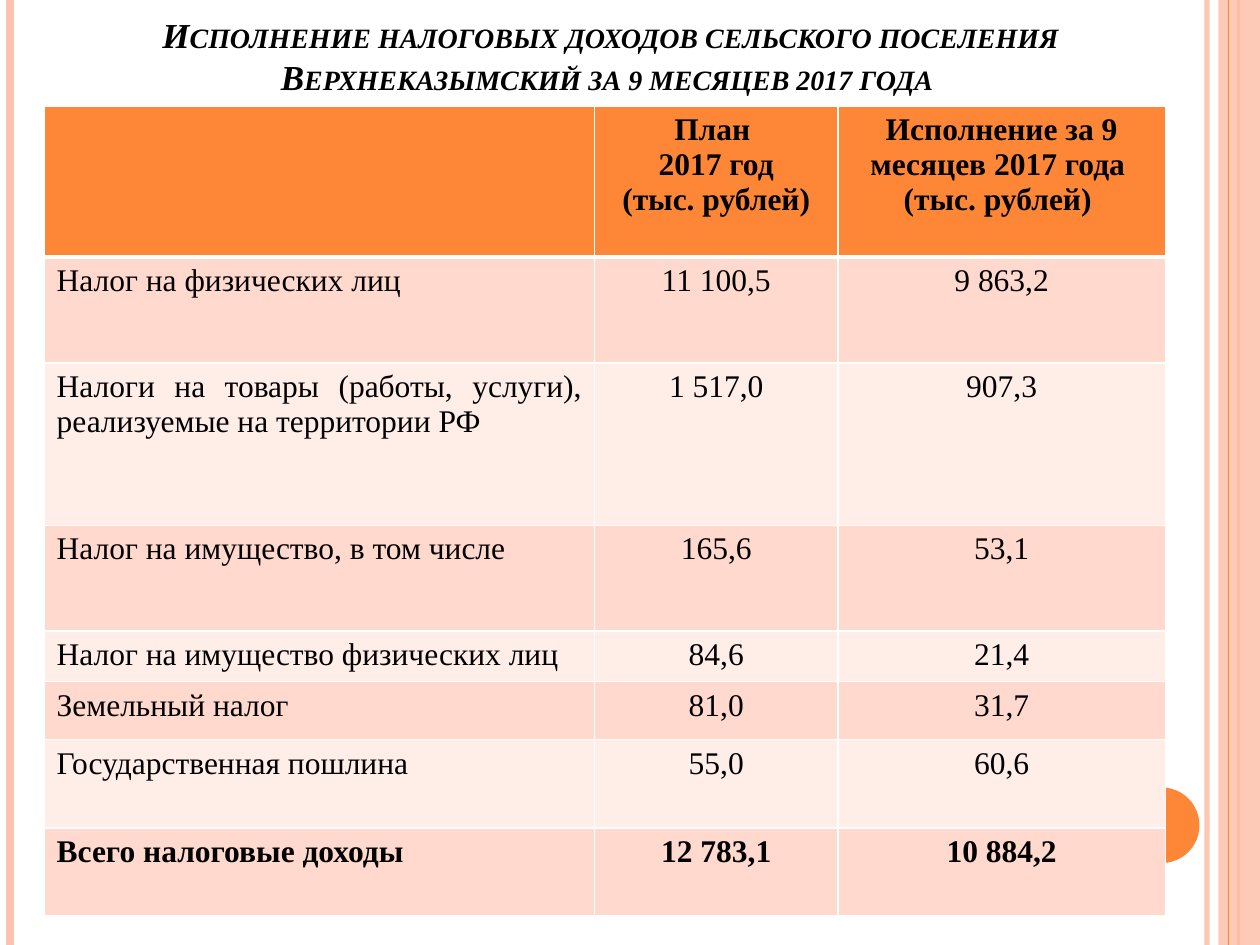
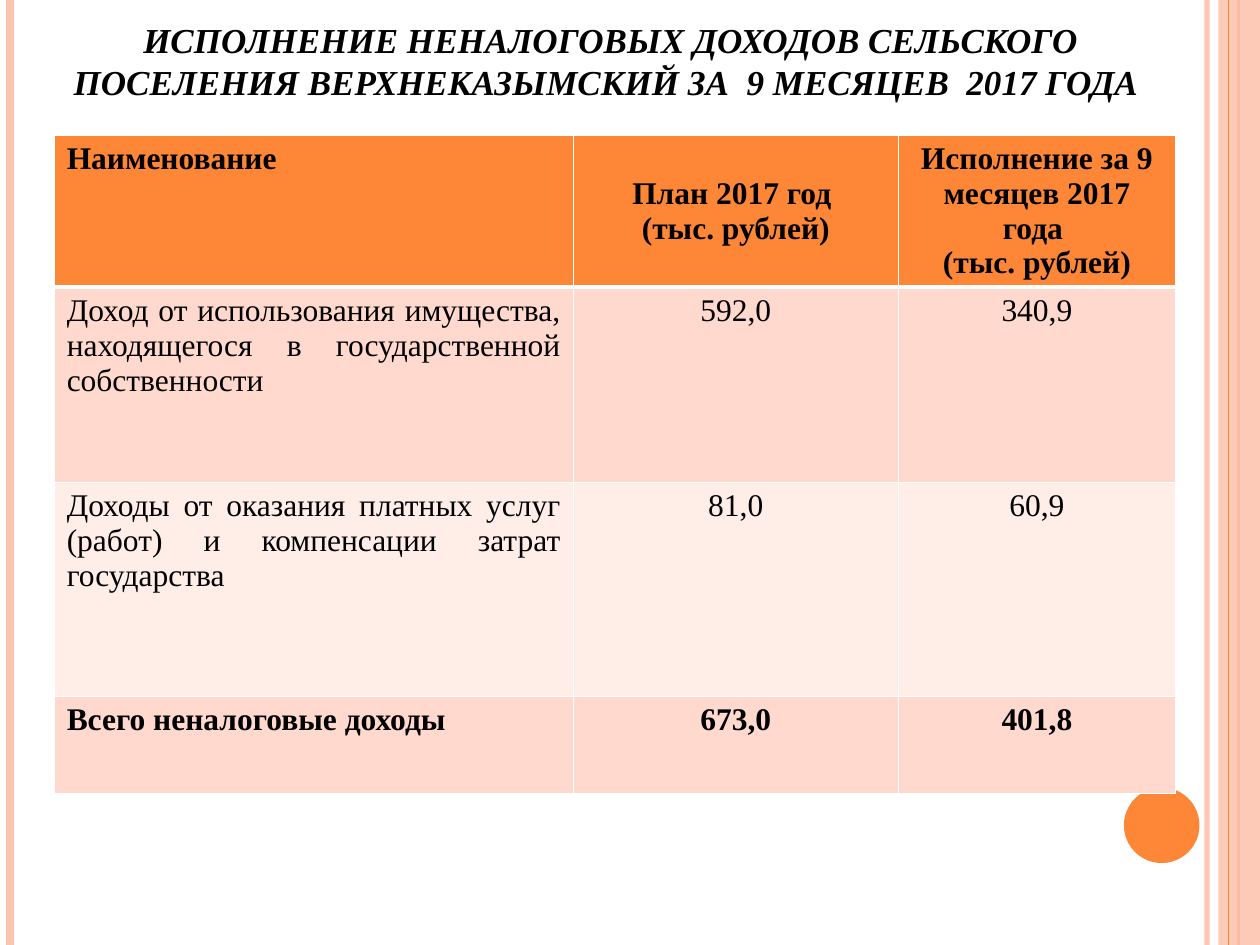
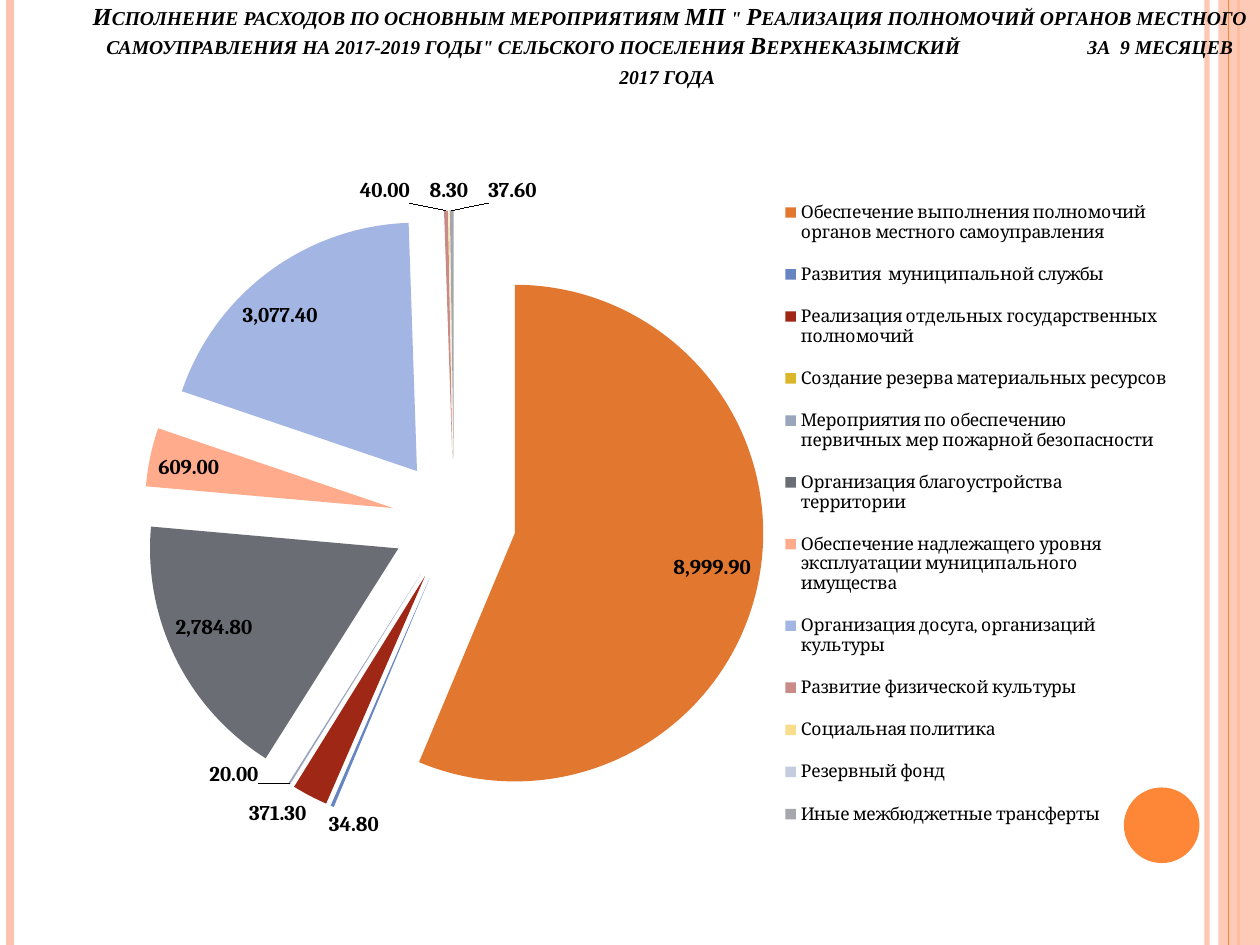
from lxml import etree
from pptx import Presentation
from pptx.chart.data import CategoryChartData
from pptx.dml.color import RGBColor
from pptx.enum.chart import XL_CHART_TYPE, XL_LABEL_POSITION, XL_LEGEND_POSITION
from pptx.enum.shapes import MSO_CONNECTOR, MSO_SHAPE
from pptx.enum.text import MSO_ANCHOR, PP_ALIGN
from pptx.oxml import parse_xml
from pptx.oxml.ns import nsdecls, qn
from pptx.util import Inches, Pt

PIE = XL_CHART_TYPE.PIE
BEST_FIT = XL_LABEL_POSITION.BEST_FIT
LEGEND_RIGHT = XL_LEGEND_POSITION.RIGHT
STRAIGHT = MSO_CONNECTOR.STRAIGHT
RECT, OVAL = MSO_SHAPE.RECTANGLE, MSO_SHAPE.OVAL
BOTTOM, MIDDLE, TOP = MSO_ANCHOR.BOTTOM, MSO_ANCHOR.MIDDLE, MSO_ANCHOR.TOP
LEFT, CENTER, JUSTIFY = PP_ALIGN.LEFT, PP_ALIGN.CENTER, PP_ALIGN.JUSTIFY

COLORS = {
    "text": "000000",
    "white": "FFFFFF",
    "accent": "FE8637",
    "stripe": "FEC3AE",
    "band_dark": "FFD9CE",
    "band_light": "FFEDE8",
}
SERIF, CHART_FONT = "Times New Roman", "Cambria"
SLIDE_W, SLIDE_H = 10, 7.5

# x, colour, width in points, opacity in percent
STRIPES = [
    (9.58, "stripe", 3, 93),
    (0.08, "stripe", 4.5, 100),
    (9.83, "accent", 1.5, 100),
    (9.75, "accent", 0.75, 100),
]

TAX_HEADER = [
    ["", LEFT, TOP],
    ["План \n2017 год\n (тыс. рублей) ", CENTER, TOP],
    ["Исполнение за 9 месяцев 2017 года \n(тыс. рублей) ", CENTER, TOP],
]
TAX_ROWS = [
    ("Налог на физических лиц ", "11 100,5", "9 863,2"),
    ("Налоги на товары (работы, услуги), реализуемые на территории РФ", "1 517,0", "907,3"),
    ("Налог на имущество, в том числе ", "165,6", "53,1"),
    ("Налог на имущество физических лиц", "84,6", "21,4"),
    ("Земельный налог ", "81,0", "31,7"),
    ("Государственная пошлина ", "55,0", "60,6"),
    ("Всего налоговые доходы ", "12 783,1", "10 884,2"),
]
NON_TAX_HEADER = [
    ["Наименование", LEFT, TOP],
    ["План 2017 год \n(тыс. рублей)", CENTER, MIDDLE],
    ["Исполнение за 9 месяцев 2017 года \n(тыс. рублей)", CENTER, TOP],
]
NON_TAX_ROWS = [
    ("Доход от использования имущества, находящегося в государственной собственности ",
     "592,0", "340,9"),
    ("Доходы от оказания платных услуг (работ) и компенсации затрат государства ",
     "81,0", "60,9"),
    ("Всего неналоговые доходы", "673,0", "401,8"),
]
# category, value, slice colour
EXPENSES = [
    ("Обеспечение выполнения полномочий органов местного самоуправления ", 8999.9, "E2772F"),
    ("Развития  муниципальной службы ", 34.8, "6685C1"),
    ("Реализация отдельных государственных полномочий ", 371.3, "9F2715"),
    ("Создание резерва материальных ресурсов ", 0, "DBB62A"),
    ("Мероприятия по обеспечению первичных мер пожарной безопасности ", 20, "9BA6BD"),
    ("Организация благоустройства территории", 2784.8, "6A6E74"),
    ("Обеспечение надлежащего уровня эксплуатации муниципального имущества ", 609, "FFAB8C"),
    ("Организация досуга, организаций культуры", 3077.4, "A3B5E3"),
    ("Развитие физической культуры", 40, "C98B87"),
    ("Социальная политика ", 8.3, "F7DD8C"),
    ("Резервный фонд", 0, "C3CDDF"),
    ("Иные межбюджетные трансферты ", 37.6, "A6A7AD"),
]


def rgb(name):
    return RGBColor.from_string(COLORS.get(name, name))


def inches(box):
    return [Inches(v) for v in box]


def set_font(font, name, size, bold=False, italic=False):
    font.name, font.size, font.bold, font.italic = name, Pt(size), bold, italic
    font.color.rgb = rgb("text")


def set_opacity(element, percent):
    clr = element.find(".//" + qn("a:srgbClr"))
    etree.SubElement(clr, qn("a:alpha")).set("val", str(percent * 1000))


def add_stripe(slide, x, color, width, opacity):
    line = slide.shapes.add_connector(STRAIGHT, *inches((x, 0, x, SLIDE_H)))
    line.line.color.rgb = rgb(color)
    line.line.width = Pt(width)
    sp_pr = line._element.spPr
    etree.SubElement(sp_pr, qn("a:effectLst"))
    if opacity < 100:
        set_opacity(sp_pr, opacity)


def add_plain_shape(slide, kind, box, color):
    sp = slide.shapes.add_shape(kind, *inches(box))
    sp.shadow.inherit = False
    sp.fill.solid()
    sp.fill.fore_color.rgb = rgb(color)
    sp.line.fill.background()
    return sp


def add_base_slide(prs):
    """Blank slide with the side stripes, right band and corner disc."""
    slide = prs.slides.add_slide(prs.slide_layouts[6])
    for stripe in STRIPES[:3]:
        add_stripe(slide, *stripe)
    band = add_plain_shape(slide, RECT, (9.67, 0, 0.33, SLIDE_H), "stripe")
    set_opacity(band._element.spPr, 87)
    add_stripe(slide, *STRIPES[3])
    add_plain_shape(slide, OVAL, (8.92, 6.25, 0.6, 0.6), "accent")
    return slide


def add_title(slide, box, parts, size, leading, bottom, side=0.1, small_caps=True, gap=0):
    """Bottom-anchored title; gap points of tracking separate its parts."""
    tf = slide.shapes.add_textbox(*inches(box)).text_frame
    tf.word_wrap = True
    tf.vertical_anchor = BOTTOM
    tf.margin_left = tf.margin_right = Inches(side)
    tf.margin_top, tf.margin_bottom = 0, Inches(bottom)
    p = tf.paragraphs[0]
    p.alignment, p.line_spacing = CENTER, Pt(leading)
    set_font(p.font, SERIF, size, bold=True, italic=True)
    for i, part in enumerate(parts):
        if i:
            space = p.add_run()
            space.text = " "
            space._r.get_or_add_rPr().set("spc", str(gap * 100))
        p.add_run().text = part
    if small_caps:
        for r in p.runs:
            r._r.get_or_add_rPr().set("cap", "small")


def set_borders(cell, top, bottom):
    tc_pr = cell._tc.get_or_add_tcPr()
    for side, width in (("L", 1), ("R", 1), ("T", top), ("B", bottom)):
        tc_pr.append(parse_xml(
            f'<a:ln{side} {nsdecls("a")} w="{Pt(width)}"><a:solidFill>'
            f'<a:srgbClr val="{COLORS["white"]}"/></a:solidFill></a:ln{side}>'))


def fill_cell(cell, text, align, anchor, color, bold, top=1, bottom=1):
    set_borders(cell, top, bottom)
    cell.fill.solid()
    cell.fill.fore_color.rgb = rgb(color)
    cell.vertical_anchor = anchor
    cell.text = text
    for p in cell.text_frame.paragraphs:
        p.alignment = align
        set_font(p.font, SERIF, 18, bold)


def add_income_table(slide, box, col_widths, row_heights, header, rows):
    """Orange header, banded body rows and a bold total in the last row."""
    table = slide.shapes.add_table(
        len(row_heights), len(col_widths), *inches(box)).table
    for column, width in zip(table.columns, col_widths):
        column.width = Inches(width)
    for row, height in zip(table.rows, row_heights):
        row.height = Inches(height)
    for c, (text, align, anchor) in enumerate(header):
        fill_cell(table.cell(0, c), text, align, anchor, "accent", True, bottom=3)
    for r, row in enumerate(rows, 1):
        color = "band_dark" if r % 2 else "band_light"
        for c, text in enumerate(row):
            fill_cell(table.cell(r, c), text, CENTER if c else JUSTIFY, TOP, color,
                      bold=r == len(rows), top=3 if r == 1 else 1)


def manual_layout(x, y, w, h, inner=False):
    target = '<c:layoutTarget val="inner"/>' if inner else ""
    sizes = "".join(f'<c:{k} val="{v}"/>' for k, v in zip("xywh", (x, y, w, h)))
    return parse_xml(
        f'<c:layout {nsdecls("c")}><c:manualLayout>{target}<c:xMode val="edge"/>'
        f'<c:yMode val="edge"/>{sizes}</c:manualLayout></c:layout>')


def add_expense_pie(slide, box):
    data = CategoryChartData(number_format="#,##0.00")
    data.categories = [name for name, _, _ in EXPENSES]
    data.add_series("Series 1", [value for _, value, _ in EXPENSES])
    chart = slide.shapes.add_chart(PIE, *inches(box), data).chart
    chart.has_title = False
    set_font(chart.font, CHART_FONT, 10)

    chart.has_legend = True
    legend = chart.legend
    legend.position = LEGEND_RIGHT
    legend.include_in_layout = False
    legend._element.find(qn("c:legendPos")).addnext(manual_layout(0.64, 0.06, 0.34, 0.88))

    plot_area = chart._chartSpace.chart.plotArea
    for old in plot_area.findall(qn("c:layout")):
        plot_area.remove(old)
    plot_area.insert(0, manual_layout(0.06, 0.1, 0.57, 0.82, inner=True))

    plot = chart.plots[0]
    plot.vary_by_categories = True
    series = plot.series[0]
    series._element.find(qn("c:tx")).addnext(
        parse_xml(f'<c:explosion {nsdecls("c")} val="25"/>'))
    for i, (_, _, color) in enumerate(EXPENSES):
        fill = series.points[i].format.fill
        fill.solid()
        fill.fore_color.rgb = rgb(color)

    labels = series.data_labels
    labels.show_value = True
    labels.number_format = "#,##0.00;;"
    labels.number_format_is_linked = False
    labels.position = BEST_FIT
    set_font(labels.font, CHART_FONT, 12, bold=True)


def add_tax_slide(prs):
    slide = add_base_slide(prs)
    add_title(slide, (0.35, 0.13, 8.99, 1.02),
              ["Исполнение налоговых доходов сельского поселения Верхнеказымский "
               "за 9 месяцев 2017 года "], 20, 24, bottom=0.38)
    add_income_table(slide, (0.35, 0.84, 8.9, 6.44), (4.37, 1.93, 2.6),
                     (1.2, 0.84, 1.29, 0.84, 0.39, 0.46, 0.7, 0.7), TAX_HEADER, TAX_ROWS)


def add_non_tax_slide(prs):
    slide = add_base_slide(prs)
    add_income_table(slide, (0.43, 1.07, 8.9, 5.32), (4.12, 2.58, 2.2),
                     (1.19, 1.55, 1.7, 0.77), NON_TAX_HEADER, NON_TAX_ROWS)
    add_title(slide, (0.35, 0.13, 8.99, 1.02),
              ["ИСПОЛНЕНИЕ НЕНАЛОГОВЫХ ДОХОДОВ СЕЛЬСКОГО ПОСЕЛЕНИЯ ВЕРХНЕКАЗЫМСКИЙ "
               "ЗА  9 МЕСЯЦЕВ  2017 ГОДА "], 20, 24, bottom=0.34, side=0.05, small_caps=False)


def add_expense_slide(prs):
    slide = add_base_slide(prs)
    add_title(slide, (0.63, 0, 9.37, 0.99),
              ["Исполнение расходов по основным мероприятиям МП \" Реализация полномочий "
               "органов местного самоуправления на 2017-2019 годы\" сельского поселения "
               "Верхнеказымский", "за  9 месяцев 2017 года "], 14, 17, bottom=0.28, gap=35)
    add_expense_pie(slide, (0.53, 1.07, 8.91, 6.01))


def main():
    prs = Presentation()
    prs.slide_width, prs.slide_height = Inches(SLIDE_W), Inches(SLIDE_H)
    add_tax_slide(prs)
    add_non_tax_slide(prs)
    add_expense_slide(prs)
    prs.save("out.pptx")


if __name__ == "__main__":
    main()
